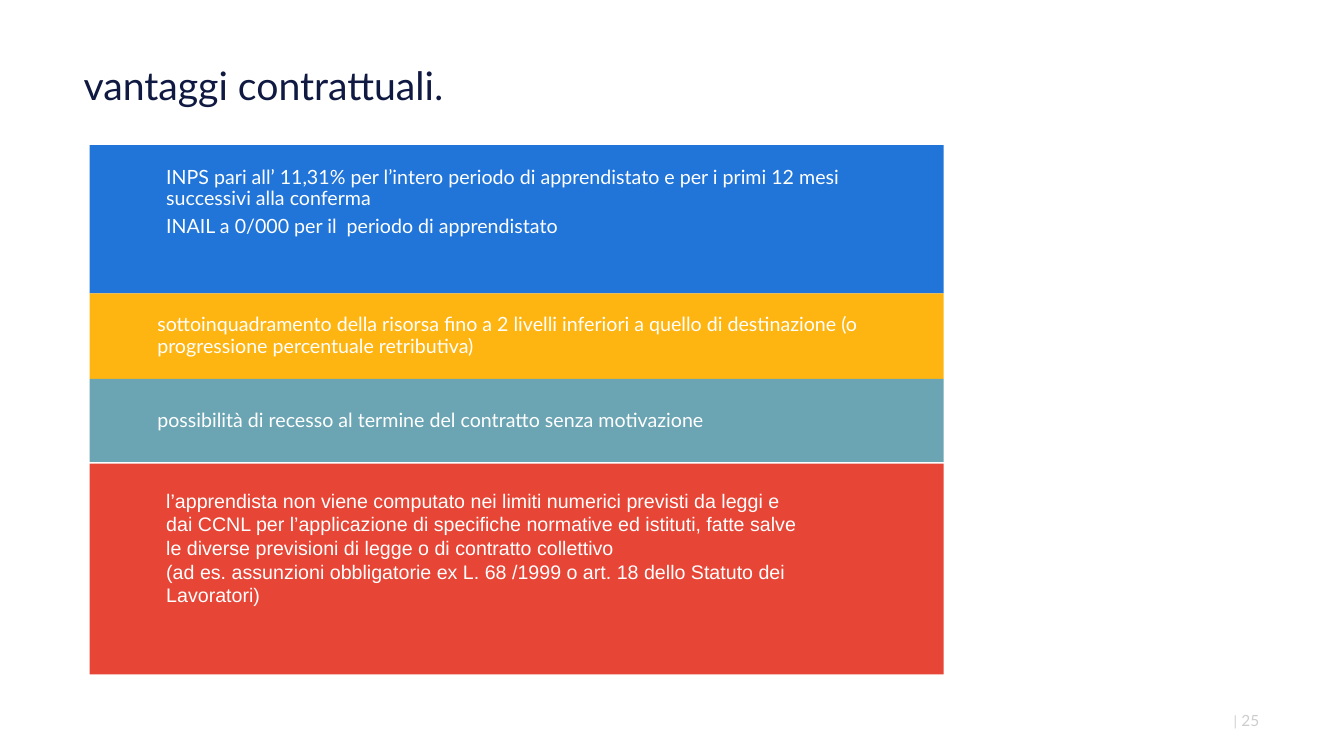
from pptx import Presentation
from pptx.dml.color import RGBColor
from pptx.enum.shapes import MSO_SHAPE
from pptx.enum.text import MSO_ANCHOR as Anchor, PP_ALIGN as Align
from pptx.util import Inches, Pt

COLORS = {
    "navy": "0F1941", "gray": "CDCDCD", "white": "FFFFFF", "blue": "2175D9",
    "yellow": "FFB511", "teal": "6BA5B4", "red": "E74536",
}
BAND_LEFT, BAND_WIDTH, BANDS_TOP = 0.89, 8.47, 1.44
TEXT_LEFT = 1.55
NO_INSETS = (0, 0, 0, 0)
BOX_INSETS = (0.1, 0.05, 0.1, 0.05)
BAND_INSETS = (0.67, 0.04, 0.04, 0.04)
TIGHT = {"line_spacing": 0.9, "space_after": Pt(4.9)}


def color(name):
    return RGBColor.from_string(COLORS[name])


class SlideBuilder:
    """Holds the text style and the current slide."""

    def __init__(self, slide, font="Lato", size=14, text_color="white"):
        self.slide = slide
        self.font, self.size, self.text_color = font, size, text_color

    def fill_text(self, shape, paragraphs, insets, anchor=Anchor.TOP, spacing=None,
                  align=Align.LEFT, font=None, size=None, text_color=None):
        """Each paragraph is a list of (text, font) runs or a plain string."""
        frame = shape.text_frame
        sides = ("margin_left", "margin_top", "margin_right", "margin_bottom")
        frame_format = {"word_wrap": True, "vertical_anchor": anchor}
        frame_format.update(zip(sides, map(Inches, insets)))
        for name, value in frame_format.items():
            setattr(frame, name, value)
        for index, runs in enumerate(paragraphs):
            paragraph = frame.add_paragraph() if index else frame.paragraphs[0]
            for name, value in {"alignment": align, **(spacing or {})}.items():
                setattr(paragraph, name, value)
            for text, run_font in [(runs, None)] if isinstance(runs, str) else runs:
                run = paragraph.add_run()
                run.text = text
                run_format = {"name": run_font or font or self.font,
                              "size": Pt(size or self.size)}
                for name, value in run_format.items():
                    setattr(run.font, name, value)
                run.font.color.rgb = color(text_color or self.text_color)

    def text(self, left, top, width, height, paragraphs, insets=BOX_INSETS, **style):
        box = self.slide.shapes.add_textbox(*map(Inches, (left, top, width, height)))
        self.fill_text(box, paragraphs, insets, **style)

    def band(self, top, height, fill, text=None, outline=None):
        shape = self.slide.shapes.add_shape(
            MSO_SHAPE.RECTANGLE, *map(Inches, (BAND_LEFT, top, BAND_WIDTH, height)))
        shape.shadow.inherit = False
        shape.fill.solid()
        shape.fill.fore_color.rgb = color(fill)
        if outline:
            shape.line.color.rgb = color(outline)
            shape.line.width = Pt(2)
        else:
            shape.line.fill.background()
        if text:
            self.fill_text(shape, [text], BAND_INSETS, anchor=Anchor.MIDDLE, spacing=TIGHT)


def main():
    presentation = Presentation()
    presentation.slide_width = Inches(13.33)
    presentation.slide_height = Inches(7.5)
    builder = SlideBuilder(presentation.slides.add_slide(presentation.slide_layouts[6]))

    # Title
    builder.text(0.83, 0.6, 11.67, 1.02,
                 [[("vantaggi contrattuali", "Lato"), (".", "Calibri")]],
                 insets=NO_INSETS, spacing={"line_spacing": 1.01},
                 size=28, text_color="navy")

    # Stacked bands
    bands = [
        (1.47, "blue", None),
        (0.85, "yellow", "sottoinquadramento della risorsa fino a 2 livelli inferiori "
                         "a quello di destinazione (o progressione percentuale retributiva)"),
        (0.84, "teal", "possibilità di recesso al termine del contratto senza motivazione"),
        (2.09, "red", None),
    ]
    top = BANDS_TOP
    for height, fill, text in bands:
        if fill == "red":  # white edge showing around the last band
            builder.band(top, height, fill, outline="white")
        builder.band(top, height, fill, text)
        top += height

    # Text over the first and last bands
    builder.text(TEXT_LEFT, 1.61, 6.89, 1.2, [
        "INPS pari all’ 11,31% per l’intero periodo di apprendistato "
        "e per i primi 12 mesi successivi alla conferma",
        "INAIL a 0/000 per il  periodo di apprendistato",
    ], spacing=TIGHT)
    builder.text(TEXT_LEFT, 4.8, 6.55, 1.58, [
        "l’apprendista non viene computato nei limiti numerici previsti da leggi e "
        "dai CCNL per l’applicazione di specifiche normative ed istituti, fatte salve "
        "le diverse previsioni di legge o di contratto collettivo",
        "(ad es. assunzioni obbligatorie ex L. 68 /1999 o art. 18 dello Statuto dei "
        "Lavoratori)",
    ], font="Arial")

    # Page number
    for left, width, text, size in [(12.2, 0.07, "|", 10), (12.21, 0.28, "25", 11)]:
        builder.text(left, 6.95, width, 0.4, [text], insets=NO_INSETS,
                     anchor=Anchor.MIDDLE, align=Align.RIGHT, size=size,
                     text_color="gray")

    presentation.save("out.pptx")


if __name__ == "__main__":
    main()
